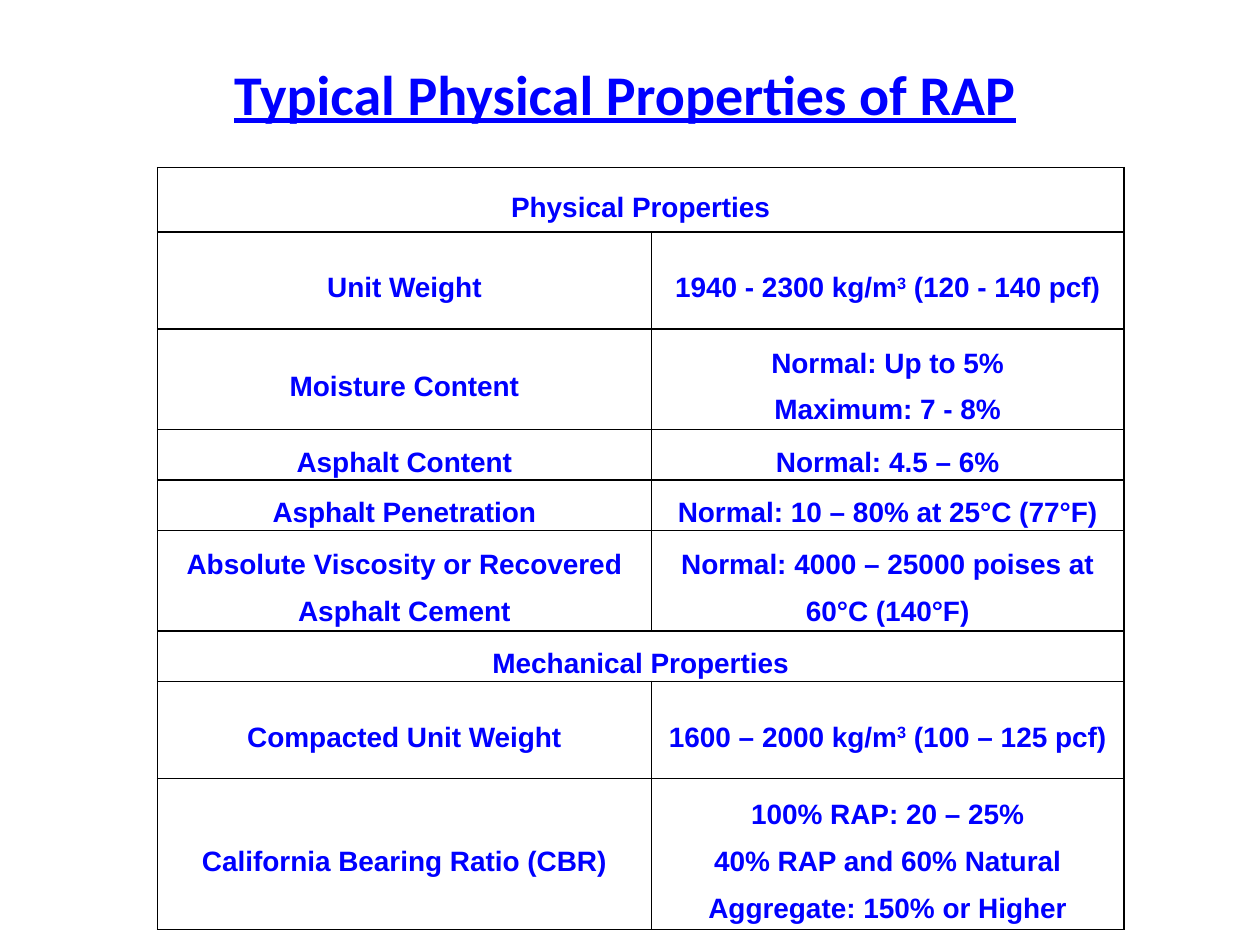
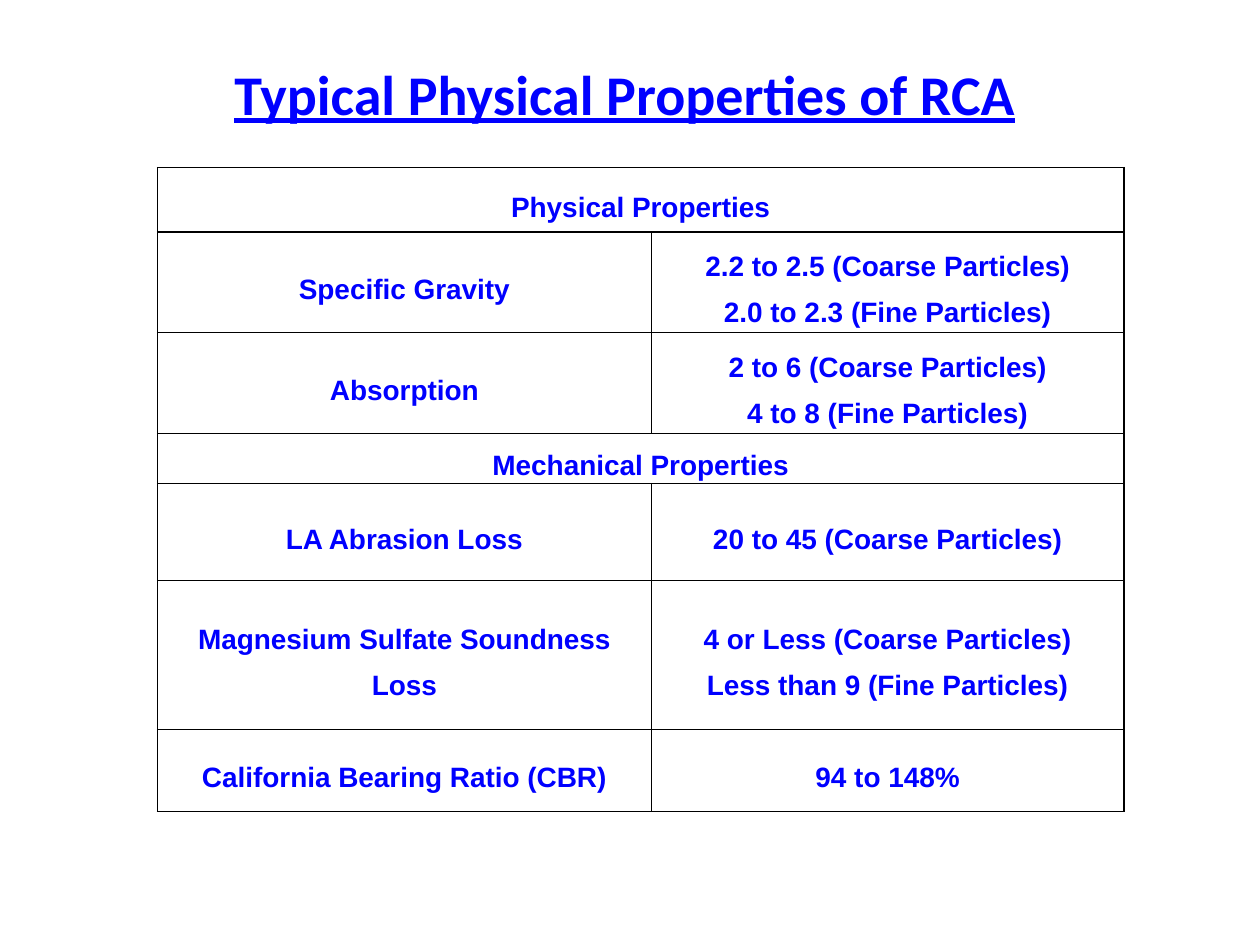
from lxml.etree import SubElement
from pptx import Presentation
from pptx.dml.color import RGBColor
from pptx.enum.text import MSO_ANCHOR as Anchor, MSO_AUTO_SIZE as AutoSize, PP_ALIGN as Align
from pptx.oxml.ns import qn
from pptx.util import Inches, Pt

BLUE, BLACK, WHITE = "0000FF", "000000", "FFFFFF"
TITLE_FONT, BODY_FONT = "Calibri", "Arial"
COLUMNS = (3.92, 3.75)

RAP_ROWS = [
    (0.51, "Physical Properties"),
    (0.77, "Unit Weight", "1940 - 2300 kg/m^3^ (120 - 140 pcf)"),
    (0.77, "Moisture Content", "Normal: Up to 5%\nMaximum: 7 - 8%"),
    (0.36, "Asphalt Content", "Normal: 4.5 – 6%"),
    (0.36, "Asphalt Penetration", "Normal: 10 – 80% at 25°C (77°F)"),
    (0.77, "Absolute Viscosity or Recovered Asphalt Cement",
     "Normal: 4000 – 25000 poises at 60°C (140°F)"),
    (0.36, "Mechanical Properties"),
    (0.77, "Compacted Unit Weight", "1600 – 2000 kg/m^3^ (100 – 125 pcf)"),
    (1.18, "California Bearing Ratio (CBR)",
     "100% RAP: 20 – 25%\n40% RAP and 60% Natural Aggregate: 150% or Higher"),
]
RCA_ROWS = [
    (0.51, "Physical Properties"),
    (0.77, "Specific Gravity", "2.2 to 2.5 (Coarse Particles)\n2.0 to 2.3 (Fine Particles)"),
    (0.77, "Absorption", "2 to 6 (Coarse Particles)\n4 to 8 (Fine Particles)"),
    (0.36, "Mechanical Properties"),
    (0.77, "LA Abrasion Loss", "20 to 45 (Coarse Particles)"),
    (1.18, "Magnesium Sulfate Soundness Loss",
     "4 or Less (Coarse Particles)\nLess than 9 (Fine Particles)"),
    (0.65, "California Bearing Ratio (CBR)", "94 to 148%"),
]


def rgb(color):
    """Turn a hex string into a colour."""
    return RGBColor.from_string(color)


class Deck:
    """Holds the presentation, its style and the current slide."""

    def __init__(self):
        """Start an empty 10 by 7.5 inch presentation."""
        self.prs = Presentation()
        self.prs.slide_width, self.prs.slide_height = Inches(10), Inches(7.5)
        self.s = None

    def slide(self):
        """Add a blank white slide and make it current."""
        self.s = self.prs.slides.add_slide(self.prs.slide_layouts[6])
        fill = self.s.background.fill
        fill.solid()
        fill.fore_color.rgb = rgb(WHITE)

    def run(self, p, text, font, size):
        """Add one bold blue run to a paragraph."""
        r = p.add_run()
        r.text = text
        r.font.name, r.font.size, r.font.bold = font, Pt(size), True
        r.font.color.rgb = rgb(BLUE)
        return r

    def title(self, text):
        """Add the centred, underlined slide title."""
        sp = self.s.shapes.add_textbox(Inches(1.42), Inches(0.42), Inches(7.08), Inches(0.64))
        tf = sp.text_frame
        tf.word_wrap, tf.auto_size = True, AutoSize.SHAPE_TO_FIT_TEXT
        p = tf.paragraphs[0]
        p.alignment = Align.CENTER
        self.run(p, text, TITLE_FONT, 32).font.underline = True

    def borders(self, cell):
        """Give a cell a thin black line on every side."""
        tc_pr = cell._tc.get_or_add_tcPr()
        for side in ("lnL", "lnR", "lnT", "lnB"):
            ln = SubElement(tc_pr, qn(f"a:{side}"), w=str(Pt(1)))
            SubElement(SubElement(ln, qn("a:solidFill")), qn("a:srgbClr"), val=BLACK)

    def cell_text(self, cell, text):
        """Write lines into a cell, with text between carets raised."""
        tf = cell.text_frame
        for i, line in enumerate(text.split("\n")):
            p = tf.add_paragraph() if i else tf.paragraphs[0]
            p.alignment, p.line_spacing = Align.CENTER, 1.5
            for j, part in enumerate(line.split("^")):
                r = self.run(p, part, BODY_FONT, 16)
                if j % 2:
                    r._r.get_or_add_rPr().set("baseline", "30000")

    def table(self, rows):
        """Add a property table; a row with one text spans both columns."""
        height = sum(row[0] for row in rows)
        table = self.s.shapes.add_table(len(rows), len(COLUMNS), Inches(1.25), Inches(1.33),
                                        Inches(sum(COLUMNS)), Inches(height)).table
        table.first_row = table.horz_banding = False
        for column, width in zip(table.columns, COLUMNS):
            column.width = Inches(width)
        for i, (row_height, *texts) in enumerate(rows):
            table.rows[i].height = Inches(row_height)
            for cell in table.rows[i].cells:
                self.borders(cell)
                cell.fill.background()
                cell.vertical_anchor = Anchor.MIDDLE
                cell.margin_left = cell.margin_right = Inches(0.07)
                cell.margin_top = cell.margin_bottom = 0
            if len(texts) == 1:
                table.cell(i, 0).merge(table.cell(i, 1))
            for j, text in enumerate(texts):
                self.cell_text(table.cell(i, j), text)


def main():
    """Build both property slides and save them."""
    deck = Deck()
    for material, rows in (("RAP", RAP_ROWS), ("RCA", RCA_ROWS)):
        deck.slide()
        deck.title(f"Typical Physical Properties of {material}")
        deck.table(rows)
    deck.prs.save("out.pptx")


if __name__ == "__main__":
    main()
